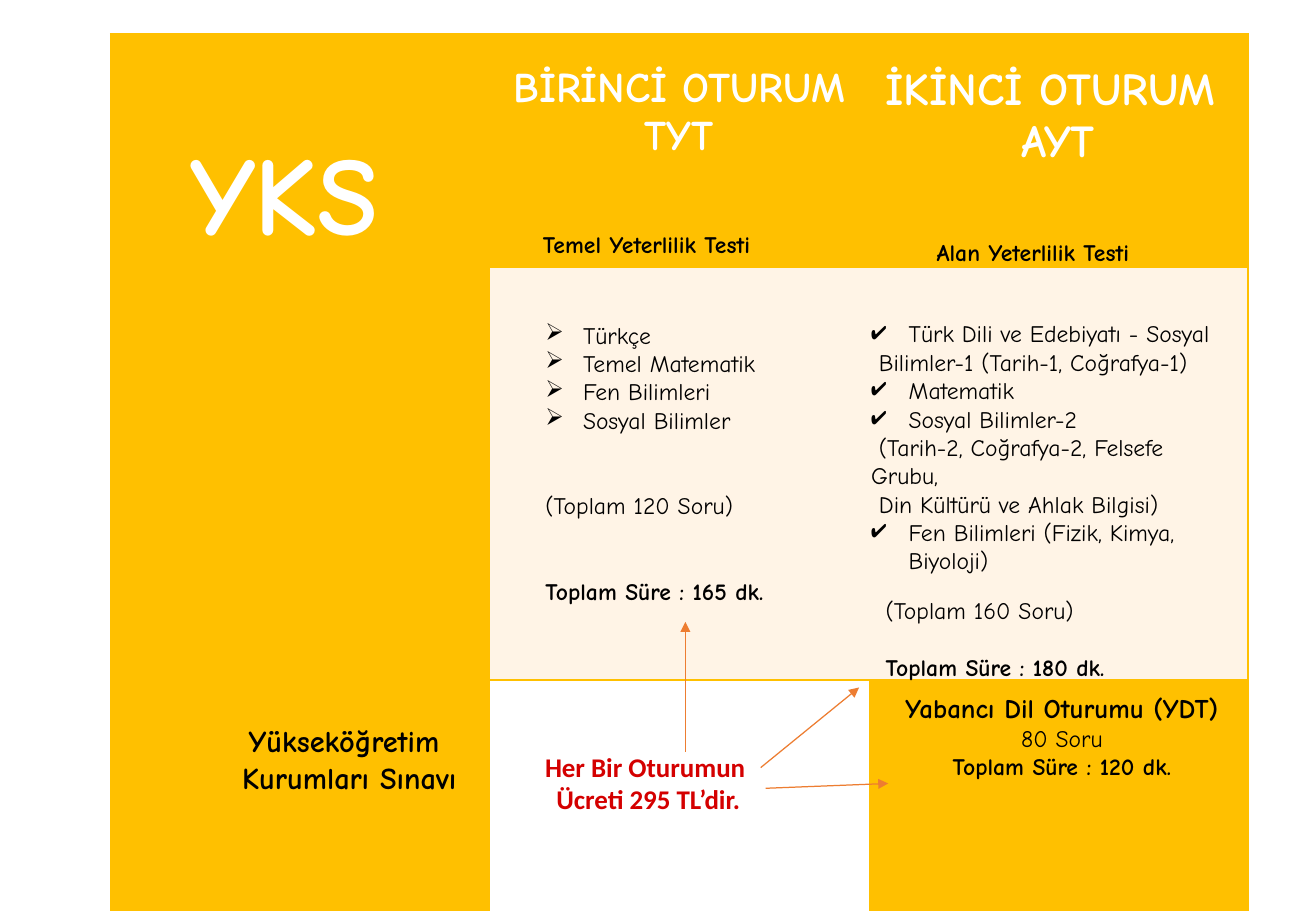
from dataclasses import dataclass

from lxml.etree import SubElement
from pptx import Presentation
from pptx.dml.color import RGBColor
from pptx.enum.shapes import MSO_CONNECTOR
from pptx.enum.text import PP_ALIGN
from pptx.oxml import parse_xml
from pptx.oxml.ns import nsdecls, qn
from pptx.util import Inches, Pt


@dataclass(frozen=True)
class Theme:
    amber: str = "FFC000"
    cream: str = "FFF4E6"
    white: str = "FFFFFF"
    black: str = "000000"
    red: str = "D40000"
    orange: str = "ED7D31"
    font: str = "Comic Neue"
    fee_font: str = "Calibri"
    body: int = 14
    subtitle: int = 16
    caption: int = 18
    first_header: int = 25
    second_header: int = 27
    title: int = 66


THEME = Theme()
CENTER = PP_ALIGN.CENTER


def write(frame, text, size=THEME.body, color=THEME.black, font=THEME.font,
          bold=False, align=PP_ALIGN.LEFT, before=0, bullet=None):
    """Add one formatted paragraph to a text frame."""
    paragraph = frame.paragraphs[0]
    if paragraph.runs:
        paragraph = frame.add_paragraph()
    paragraph.alignment = align
    if before:
        paragraph.space_before = Pt(before)
    if bullet:
        properties = paragraph._p.get_or_add_pPr()
        properties.set("marL", str(Inches(0.31)))
        properties.set("indent", str(-Inches(0.31)))
        bullet_color = SubElement(properties, qn("a:buClr"))
        SubElement(bullet_color, qn("a:srgbClr"), val=color)
        SubElement(properties, qn("a:buChar"), char=bullet)
    run = paragraph.add_run()
    run.text = text
    run.font.size = Pt(size)
    run.font.name = font
    run.font.bold = bold
    run.font.color.rgb = RGBColor.from_string(color)


class SlideBuilder:
    def __init__(self, presentation, theme):
        self.theme = theme
        self.slide = presentation.slides.add_slide(presentation.slide_layouts[6])

    def text_box(self, left, top, width, height, lines, **style):
        """Each line is a text and its own format; style applies to all."""
        shape = self.slide.shapes.add_textbox(
            Inches(left), Inches(top), Inches(width), Inches(height))
        shape.text_frame.word_wrap = True
        for text, options in lines:
            write(shape.text_frame, text, **{**style, **options})

    def arrow(self, start, end):
        line = self.slide.shapes.add_connector(
            MSO_CONNECTOR.STRAIGHT, *(Inches(value) for value in (*start, *end)))
        line.line.color.rgb = RGBColor.from_string(self.theme.orange)
        line.line.width = Pt(0.75)
        SubElement(line.line._get_or_add_ln(), qn("a:tailEnd"), type="triangle")
        SubElement(line._element.spPr, qn("a:effectLst"))

    def table(self, left, top, widths, heights, fills):
        table = self.slide.shapes.add_table(
            len(heights), len(widths), Inches(left), Inches(top),
            Inches(sum(widths)), Inches(sum(heights))).table
        table.first_row = table.horz_banding = False
        for column, width in zip(table.columns, widths):
            column.width = Inches(width)
        for row, height in zip(table.rows, heights):
            row.height = Inches(height)
        last = len(widths) - 1
        for row, colors in enumerate(fills):
            for column, color in enumerate(colors):
                cell = table.cell(row, column)
                cell.fill.solid()
                cell.fill.fore_color.rgb = RGBColor.from_string(color)
                self.borders(cell, L=column == 0, R=column == last, T=True, B=True)
        return table

    def borders(self, cell, **sides):
        properties = cell._tc.get_or_add_tcPr()
        for index, (side, visible) in enumerate(sides.items()):
            paint = (f'<a:solidFill><a:srgbClr val="{self.theme.amber}"/></a:solidFill>'
                     if visible else "<a:noFill/>")
            properties.insert(index, parse_xml(
                f'<a:ln{side} {nsdecls("a")} w="12700">{paint}</a:ln{side}>'))

    def header(self, cell, lines, top, right=0.1, **style):
        cell.margin_top, cell.margin_right = Inches(top), Inches(right)
        for text in lines:
            write(cell.text_frame, text, color=self.theme.white,
                  bold=True, align=CENTER, **style)


def main():
    presentation = Presentation()
    presentation.slide_width, presentation.slide_height = Inches(10.83), Inches(7.5)
    builder = SlideBuilder(presentation, THEME)
    strong = {"bold": True}
    arrowed = {"bullet": "➢"}
    checked = {"bullet": "✔"}

    # Background table with the session headers
    amber, cream, white = THEME.amber, THEME.cream, THEME.white
    table = builder.table(0.91, 0.28, [3.12] * 3, [1.92, 3.4, 1.9], [
        [amber, amber, amber], [amber, cream, cream], [amber, white, amber]])
    table.cell(0, 0).merge(table.cell(2, 0))
    builder.header(table.cell(0, 0), ["YKS"], 0.83, right=0.36, size=THEME.title)
    builder.header(table.cell(0, 1), ["BİRİNCİ OTURUM", "TYT"], 0.25,
                   size=THEME.first_header)
    builder.header(table.cell(0, 2), ["İKİNCİ OTURUM ", "AYT"], 0.25,
                   size=THEME.second_header)

    # Exam name and test names
    builder.text_box(1.8, 5.9, 2.15, 0.71, [
        ("Yükseköğretim ", {}), ("Kurumları Sınavı", {})],
        size=THEME.caption, bold=True, align=CENTER)
    builder.text_box(4.37, 1.84, 2.28, 0.34, [("Temel Yeterlilik Testi", strong)])
    builder.text_box(7.61, 1.91, 2.13, 0.34, [("Alan Yeterlilik Testi", strong)])

    # First session
    builder.text_box(4.39, 2.59, 2.4, 2.46, [
        ("Türkçe", arrowed),
        ("Temel Matematik", arrowed),
        ("Fen Bilimleri", arrowed),
        ("Sosyal Bilimler", arrowed),
        ("(Toplam 120 Soru)", {"before": 34}),
        ("Toplam Süre : 165 dk.", {"before": 34, **strong})])

    # Second session
    builder.text_box(7.07, 2.58, 3.07, 2.46, [
        ("Türk Dili ve Edebiyatı - Sosyal", checked),
        (" Bilimler-1 (Tarih-1, Coğrafya-1)", {}),
        ("Matematik", checked),
        ("Sosyal Bilimler-2", checked),
        (" (Tarih-2, Coğrafya-2, Felsefe Grubu,", {}),
        (" Din Kültürü ve Ahlak Bilgisi)", {}),
        ("Fen Bilimleri (Fizik, Kimya, Biyoloji)", checked)])
    builder.text_box(7.19, 4.86, 3.07, 0.81, [
        ("(Toplam 160 Soru)", {}),
        ("Toplam Süre : 180 dk.", {"before": 17, **strong})])

    # Foreign language session
    builder.text_box(7.19, 5.64, 3.1, 1.11, [
        ("Yabancı Dil Oturumu (YDT)", {"size": THEME.subtitle, **strong}),
        ("80 Soru", {}),
        ("Toplam Süre : 120 dk.", strong)], align=CENTER)

    # Fee note and its arrows to the sessions
    builder.text_box(4.37, 6.13, 1.93, 0.64, [
        ("Her Bir Oturumun ", {}), ("Ücreti 295 TL’dir.", {})],
        size=THEME.subtitle, font=THEME.fee_font, color=THEME.red,
        bold=True, align=CENTER)
    for start, end in [((5.64, 6.19), (5.64, 5.12)),
                       ((6.26, 6.32), (7.07, 5.66)),
                       ((6.3, 6.49), (7.31, 6.45))]:
        builder.arrow(start, end)

    presentation.save("out.pptx")


if __name__ == "__main__":
    main()
